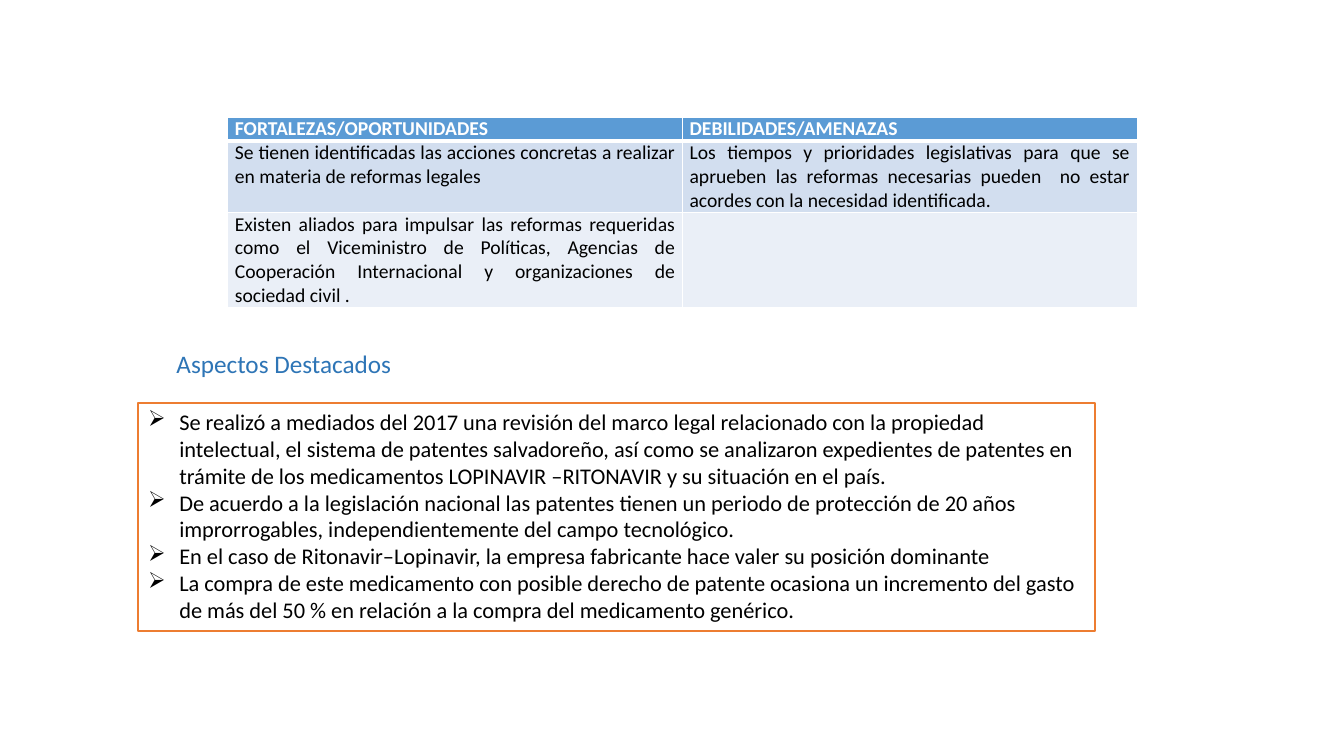
"""Build a slide with a strengths and weaknesses table and its highlights."""
import pptx
import pptx.dml.color
import pptx.enum.shapes
import pptx.enum.text
import pptx.oxml
import pptx.oxml.ns
import pptx.util
from pptx.util import Inches

FONT = "Calibri"
COLORS = {
    "heading": "2E75B6",
    "header": "5B9BD5",
    "band_dark": "D2DEEF",
    "band_light": "EAEFF7",
    "frame": "ED7D31",
    "text": "000000",
    "white": "FFFFFF",
}
HEADING = "Aspectos Destacados"
TABLE_ROWS = [
    ("FORTALEZAS/OPORTUNIDADES", "DEBILIDADES/AMENAZAS"),
    (
        "Se tienen identificadas las acciones concretas a realizar en materia de reformas legales",
        "Los tiempos y prioridades legislativas para que se aprueben las reformas necesarias pueden  no estar acordes con la necesidad identificada.",
    ),
    (
        "Existen aliados para impulsar las reformas requeridas como el Viceministro de Políticas, Agencias de Cooperación Internacional y organizaciones de sociedad civil .",
        "",
    ),
]
ROW_STYLES = [
    (0.23, "header", "white"),
    (0.71, "band_dark", "text"),
    (0.93, "band_light", "text"),
]
HIGHLIGHTS = [
    "Se realizó a mediados del 2017 una revisión del marco legal relacionado con la propiedad intelectual, el sistema de patentes salvadoreño, así como se analizaron expedientes de patentes en trámite de los medicamentos LOPINAVIR –RITONAVIR y su situación en el país.",
    "De acuerdo a la legislación nacional las patentes tienen un periodo de protección de 20 años improrrogables, independientemente del campo tecnológico.",
    "En el caso de Ritonavir–Lopinavir, la empresa fabricante hace valer su posición dominante",
    "La compra de este medicamento con posible derecho de patente ocasiona un incremento del gasto de más del 50 % en relación a la compra del medicamento genérico.",
]


def color(name):
    return pptx.dml.color.RGBColor.from_string(COLORS[name])


def paint(fill, name):
    fill.solid()
    fill.fore_color.rgb = color(name)


def format_paragraph(paragraph, size, color_name, alignment, bold=False):
    paragraph.alignment = alignment
    paragraph.font.name = FONT
    paragraph.font.size = pptx.util.Pt(size)
    paragraph.font.bold = bold
    paragraph.font.color.rgb = color(color_name)


def add_borders(cell, bottom_width):
    properties = cell._tc.get_or_add_tcPr()
    for side, width in (("L", 1), ("R", 1), ("T", 1), ("B", bottom_width)):
        properties.append(pptx.oxml.parse_xml(
            f'<a:ln{side} {pptx.oxml.ns.nsdecls("a")} w="{pptx.util.Pt(width)}">'
            f'<a:solidFill><a:srgbClr val="{COLORS["white"]}"/></a:solidFill></a:ln{side}>'
        ))


def add_bullet(paragraph, symbol, indent):
    properties = paragraph._p.get_or_add_pPr()
    properties.set("marL", str(indent))
    properties.set("indent", str(-indent))
    namespace = pptx.oxml.ns.nsdecls("a")
    properties.insert(0, pptx.oxml.parse_xml(f'<a:buChar {namespace} char="{symbol}"/>'))


def add_heading(slide):
    title = slide.shapes.title
    title.left, title.top = Inches(1.65), Inches(3.41)
    title.width, title.height = Inches(2.35), Inches(0.71)
    frame = title.text_frame
    frame.text = HEADING
    frame.word_wrap = False
    frame.auto_size = pptx.enum.text.MSO_AUTO_SIZE.NONE
    frame.vertical_anchor = pptx.enum.text.MSO_ANCHOR.TOP
    format_paragraph(frame.paragraphs[0], 18, "heading", pptx.enum.text.PP_ALIGN.LEFT)


def add_swot_table(slide):
    height = sum(row_height for row_height, _, _ in ROW_STYLES)
    table = slide.shapes.add_table(
        len(TABLE_ROWS), 2, Inches(2.26), Inches(1.16), Inches(9.02), Inches(height)
    ).table
    table.horz_banding = False
    for row_index, (texts, style) in enumerate(zip(TABLE_ROWS, ROW_STYLES)):
        row_height, fill_name, text_color = style
        is_header = row_index == 0
        table.rows[row_index].height = Inches(row_height)
        for column_index, text in enumerate(texts):
            cell = table.cell(row_index, column_index)
            cell.text = text
            cell.margin_left = cell.margin_right = Inches(0.07)
            cell.margin_top = cell.margin_bottom = 0
            add_borders(cell, 3 if is_header else 1)
            paint(cell.fill, fill_name)
            format_paragraph(cell.text_frame.paragraphs[0], 14, text_color,
                             pptx.enum.text.PP_ALIGN.JUSTIFY, is_header)


def add_highlights(slide):
    box = slide.shapes.add_shape(
        pptx.enum.shapes.MSO_SHAPE.RECTANGLE,
        Inches(1.37), Inches(4), Inches(9.49), Inches(2.26),
    )
    box.shadow.inherit = False
    paint(box.fill, "white")
    box.line.color.rgb = color("frame")
    box.line.width = pptx.util.Pt(1)
    frame = box.text_frame
    frame.word_wrap = True
    frame.vertical_anchor = pptx.enum.text.MSO_ANCHOR.TOP
    frame.text = "\n".join(HIGHLIGHTS)
    for paragraph in frame.paragraphs:
        format_paragraph(paragraph, 16, "text", pptx.enum.text.PP_ALIGN.LEFT)
        add_bullet(paragraph, "➢", Inches(0.31))


def main():
    deck = pptx.Presentation()
    deck.slide_width, deck.slide_height = Inches(13.33), Inches(7.5)
    slide = deck.slides.add_slide(deck.slide_layouts[5])
    add_heading(slide)
    add_swot_table(slide)
    add_highlights(slide)
    deck.save("out.pptx")


if __name__ == "__main__":
    main()
